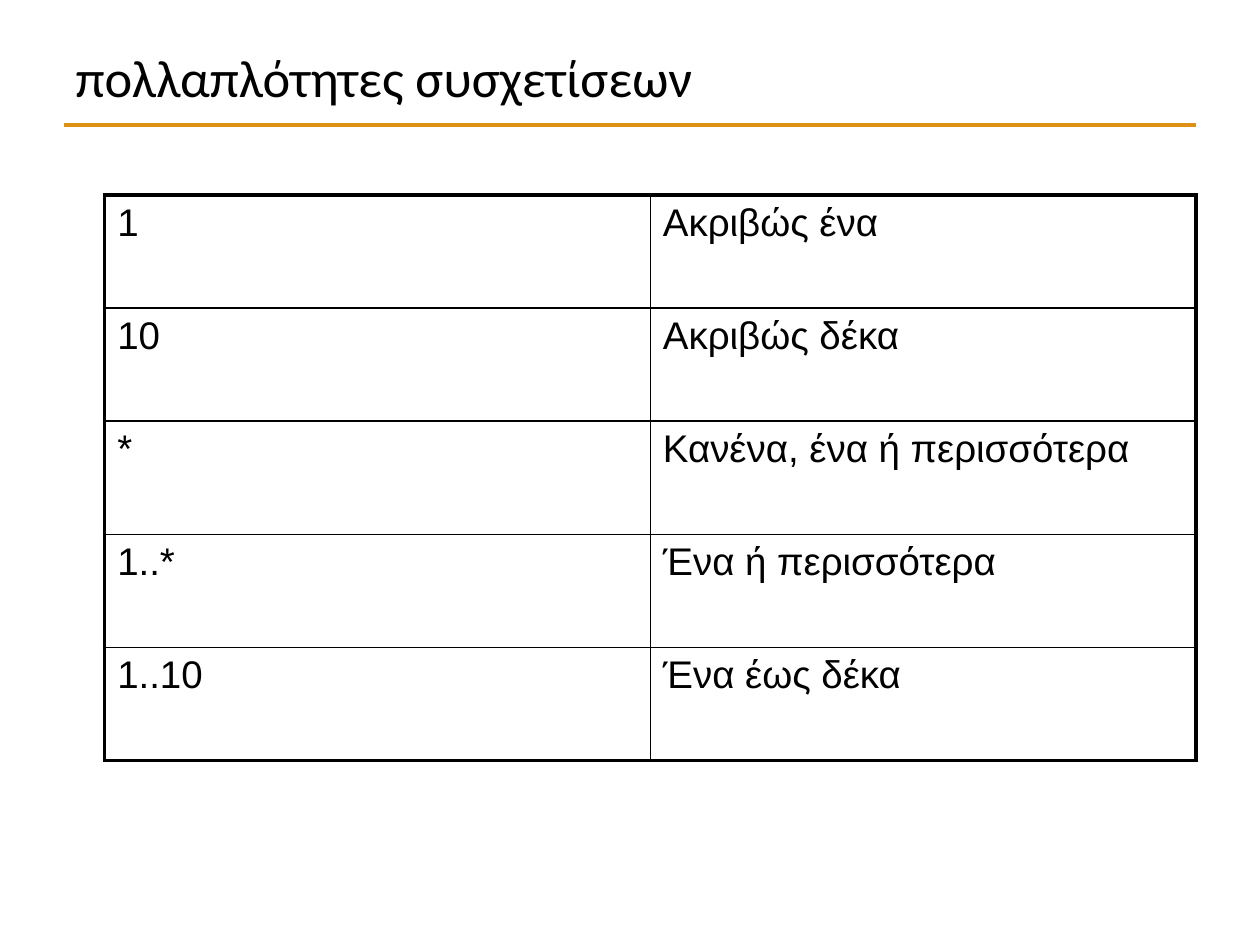
from lxml import etree
from pptx import Presentation
from pptx.dml.color import RGBColor
from pptx.enum.shapes import MSO_CONNECTOR
from pptx.enum.text import MSO_ANCHOR, PP_ALIGN
from pptx.oxml.ns import qn
from pptx.util import Cm, Pt

LEFT = PP_ALIGN.LEFT
MIDDLE = MSO_ANCHOR.MIDDLE
STRAIGHT = MSO_CONNECTOR.STRAIGHT
TITLE_ONLY = 5

TITLE = "πολλαπλότητες συσχετίσεων"
MULTIPLICITIES = [
    ("1", "Ακριβώς ένα"),
    ("10", "Ακριβώς δέκα"),
    ("*", "Κανένα, ένα ή περισσότερα"),
    ("1..*", "Ένα ή περισσότερα"),
    ("1..10", "Ένα έως δέκα"),
]

THEME = {
    "ink": "000000",
    "accent": "DC9016",
    "title_font": "Calibri",
    "body_font": "Arial",
    "title_size": 30,
    "body_size": 22,
    "rule_width": 2.5,
    "outer_border": 2.25,
    "inner_border": 1,
}


def write_text(frame, text, *, font, size, color=THEME["ink"]):
    para = frame.paragraphs[0]
    para.alignment = LEFT
    span = para.add_run()
    span.text = text
    span.font.name = font
    span.font.size = Pt(size)
    span.font.color.rgb = RGBColor.from_string(color)


def add_title(slide):
    box = slide.shapes.title
    box.left, box.top, box.width, box.height = Cm(1.27), Cm(0.76), Cm(22.86), Cm(1.55)
    box.text_frame.vertical_anchor = MIDDLE
    write_text(box.text_frame, TITLE, font=THEME["title_font"], size=THEME["title_size"])


def add_title_rule(slide):
    rule = slide.shapes.add_connector(STRAIGHT, Cm(1.3), Cm(2.52), Cm(24.1), Cm(2.52))
    rule.line.color.rgb = RGBColor.from_string(THEME["accent"])
    rule.line.width = Pt(THEME["rule_width"])
    etree.SubElement(rule._element.spPr, qn("a:effectLst"))


def set_borders(cell, outer_sides):
    """Draw all four borders, thicker on the sides that lie on the table's edge."""
    properties = cell._tc.get_or_add_tcPr()
    for side in "LRTB":
        weight = THEME["outer_border" if side in outer_sides else "inner_border"]
        border = etree.SubElement(properties, qn(f"a:ln{side}"), w=str(Pt(weight)))
        fill = etree.SubElement(border, qn("a:solidFill"))
        etree.SubElement(fill, qn("a:srgbClr"), val=THEME["ink"])


def add_multiplicity_table(slide):
    row_count, column_count = len(MULTIPLICITIES), len(MULTIPLICITIES[0])
    frame = slide.shapes.add_table(
        row_count, column_count, Cm(2.11), Cm(3.93), Cm(22), Cm(11.4))
    table = frame.table
    table.first_row = False
    table.horz_banding = False
    for r, row in enumerate(MULTIPLICITIES):
        for c, text in enumerate(row):
            cell = table.cell(r, c)
            edges = {"L": c == 0, "R": c == column_count - 1,
                     "T": r == 0, "B": r == row_count - 1}
            set_borders(cell, [side for side, on_edge in edges.items() if on_edge])
            cell.fill.background()
            write_text(cell.text_frame, text,
                       font=THEME["body_font"], size=THEME["body_size"])


def main():
    deck = Presentation()
    deck.slide_width, deck.slide_height = Cm(25.4), Cm(19.05)
    slide = deck.slides.add_slide(deck.slide_layouts[TITLE_ONLY])
    add_title_rule(slide)
    add_title(slide)
    add_multiplicity_table(slide)
    deck.save("out.pptx")


if __name__ == "__main__":
    main()
